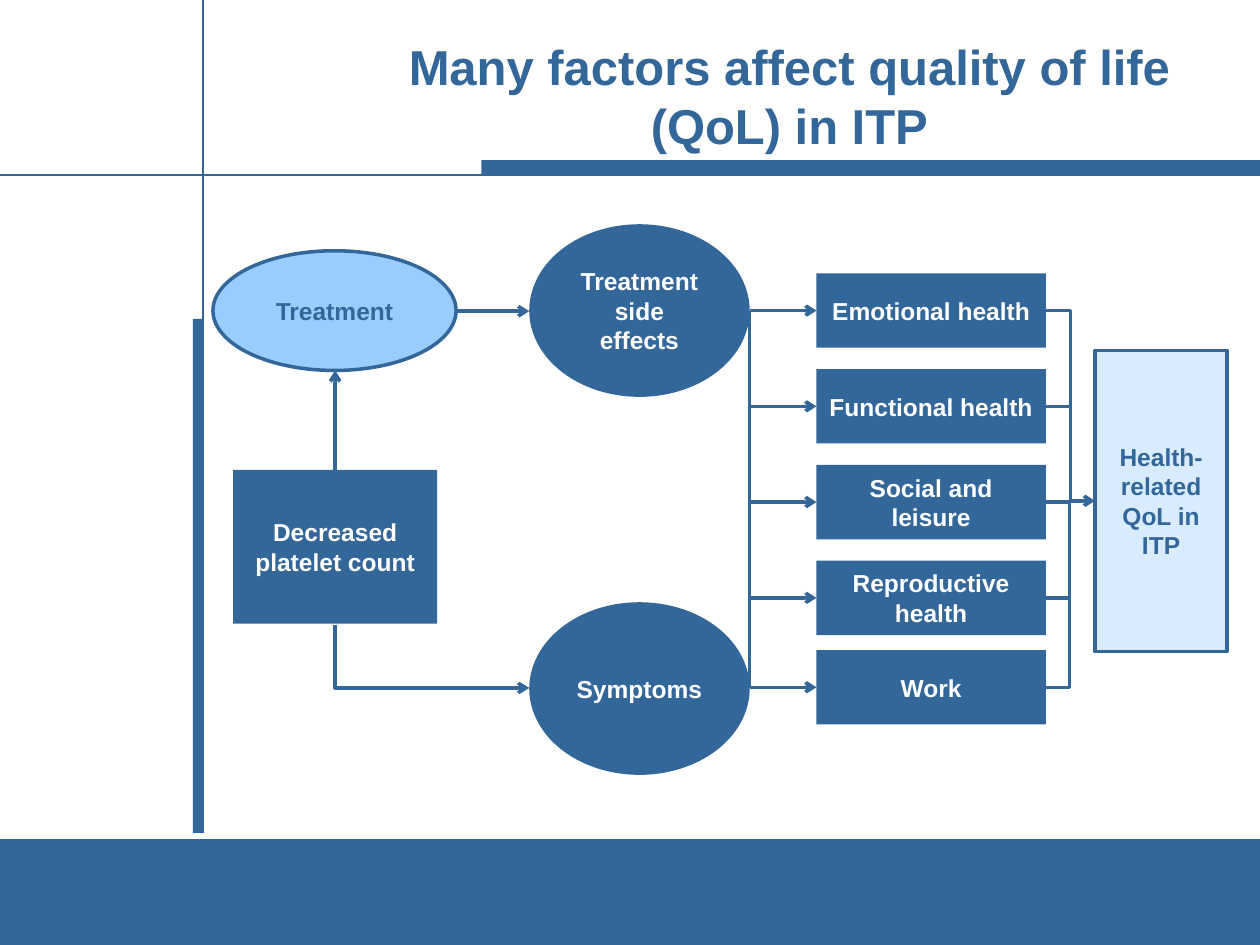
from dataclasses import dataclass
from typing import Optional

from lxml import etree
from pptx import Presentation
from pptx.dml.color import RGBColor
from pptx.enum import shapes, text
from pptx.oxml.ns import qn
from pptx.util import Inches, Pt

BLUE = RGBColor(0x33, 0x66, 0x99)
SKY = RGBColor(0x99, 0xCC, 0xFF)
PALE = RGBColor(0xD9, 0xEC, 0xFF)
WHITE = RGBColor(0xFF, 0xFF, 0xFF)
RECT = shapes.MSO_SHAPE.RECTANGLE
OVAL = shapes.MSO_SHAPE.OVAL
STRAIGHT = shapes.MSO_CONNECTOR.STRAIGHT
ELBOW = shapes.MSO_CONNECTOR.ELBOW
TOP, LEFT, RIGHT = 0, 1, 3


@dataclass
class Node:
    label: str
    x: float
    y: float
    w: float
    h: float
    kind: int = RECT
    fill: RGBColor = BLUE
    color: RGBColor = WHITE
    line: Optional[RGBColor] = None


def write(tf, label: str, size: float, color: RGBColor) -> None:
    tf.word_wrap = True
    tf.vertical_anchor = text.MSO_ANCHOR.MIDDLE
    p = tf.paragraphs[0]
    p.alignment = text.PP_ALIGN.CENTER
    r = p.add_run()
    r.text = label
    for name, value in dict(name="Arial", size=Pt(size), bold=True).items():
        setattr(r.font, name, value)
    r.font.color.rgb = color


def add_node(s, n: Node):
    sp = s.shapes.add_shape(n.kind, *map(Inches, (n.x, n.y, n.w, n.h)))
    sp.shadow.inherit = False
    sp.fill.solid()
    sp.fill.fore_color.rgb = n.fill
    if n.line is None:
        sp.line.fill.background()
    else:
        sp.line.color.rgb = n.line
        sp.line.width = Pt(2)
    if n.label:
        write(sp.text_frame, n.label, 14, n.color)
        if n.kind == RECT:
            sp.text_frame.margin_left = sp.text_frame.margin_right = Inches(0.09)
    return sp


def add_line(s, x1: float, y1: float, x2: float, y2: float,
             arrow: bool = False, kind: int = STRAIGHT, width: float = 2):
    c = s.shapes.add_connector(kind, *map(Inches, (x1, y1, x2, y2)))
    c.line.color.rgb = BLUE
    c.line.width = Pt(width)
    if arrow:
        etree.SubElement(c.line._get_or_add_ln(), qn("a:tailEnd"), type="arrow")
    etree.SubElement(c._element.spPr, qn("a:effectLst"))
    return c


def main() -> None:
    prs = Presentation()
    prs.slide_width, prs.slide_height = Inches(10), Inches(7.5)
    s = prs.slides.add_slide(prs.slide_layouts[5])

    # Frame: footer band, side bar and title rule
    for box in ((0, 6.66, 10, 0.84), (1.53, 2.53, 0.08, 4.08), (3.82, 1.27, 6.18, 0.12)):
        add_node(s, Node("", *box))
    add_line(s, 1.61, 0, 1.61, 6.61, width=1)
    add_line(s, 0, 1.39, 10, 1.39, width=1)

    # Title
    title = s.shapes.title
    title.left, title.top, title.width, title.height = map(Inches, (2.72, 0.44, 7.09, 0.63))
    write(title.text_frame, "Many factors affect quality of life (QoL) in ITP", 28, BLUE)

    # Causes
    add_node(s, Node("Treatment side effects", 4.2, 1.78, 1.75, 1.37, OVAL))
    add_node(s, Node("Symptoms", 4.2, 4.78, 1.75, 1.37, OVAL))
    add_node(s, Node("Treatment", 1.69, 1.99, 1.93, 0.95, OVAL, SKY, BLUE, BLUE))
    platelets = add_node(s, Node("Decreased platelet count", 1.85, 3.73, 1.62, 1.22))

    # Outcome
    outcome = add_node(s, Node("Health-related QoL in ITP", 8.69, 2.78, 1.05, 2.39,
                               RECT, PALE, BLUE, BLUE))

    # Links between causes
    add_line(s, 3.62, 2.47, 4.2, 2.47, arrow=True)
    add_line(s, 2.66, 3.73, 2.66, 2.94, arrow=True).begin_connect(platelets, TOP)
    # A quarter turn makes the single bend go down, then right
    bend = add_line(s, 3.68, 4.44, 3.18, 5.98, arrow=True, kind=ELBOW)
    bend._element.spPr.find(qn("a:xfrm")).set("rot", str(270 * 60000))
    bend._element.spPr.find(qn("a:prstGeom")).set("prst", "bentConnector2")

    # Health domains, each fed from the left trunk and leading to the right one
    left_trunk, right_trunk, box_h = 5.95, 8.49, 0.59
    domains = {"Emotional health": 2.17, "Functional health": 2.93, "Social and leisure": 3.69,
               "Reproductive health": 4.45, "Work": 5.16}
    for i, (label, top) in enumerate(domains.items()):
        box = add_node(s, Node(label, 6.48, top, 1.82, box_h))
        mid = top + box_h / 2
        add_line(s, left_trunk, mid, 6.48, mid, arrow=True).end_connect(box, LEFT)
        if i == 0:
            c = add_line(s, 8.3, mid, 8.69, 3.98, arrow=True, kind=ELBOW)
            c.end_connect(outcome, LEFT)
        else:
            c = add_line(s, 8.3, mid, right_trunk, mid)
        c.begin_connect(box, RIGHT)
    add_line(s, left_trunk, 2.47, left_trunk, 5.46)
    add_line(s, right_trunk, 3.98, right_trunk, 5.46)

    prs.save("out.pptx")


if __name__ == "__main__":
    main()
